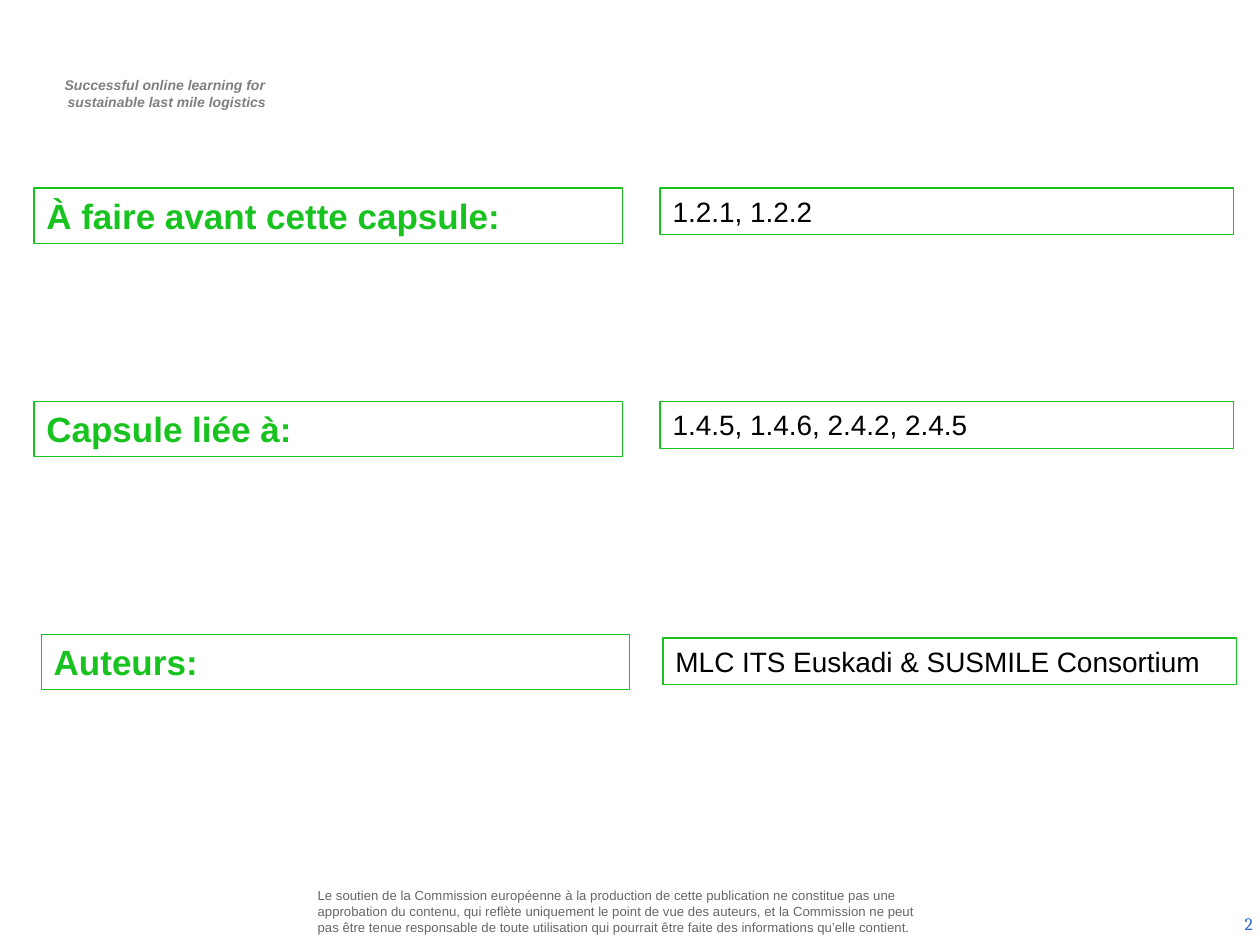
import pptx
import pptx.dml.color
import pptx.enum.shapes
import pptx.enum.text
import pptx.util

Pt = pptx.util.Pt
ALIGN = pptx.enum.text.PP_ALIGN
ANCHOR = pptx.enum.text.MSO_ANCHOR
GREEN = "18C320"


def colour(value):
    """Turn a hex string into a colour."""
    return pptx.dml.color.RGBColor.from_string(value)


def write(shape, lines, size, ink, font="Arial", bold=False, italic=False,
          align=ALIGN.LEFT, anchor=ANCHOR.TOP, inset=(7.2, 3.6), indent=0):
    """Fill a shape with evenly formatted paragraphs."""
    frame = shape.text_frame
    frame.word_wrap = True
    frame.vertical_anchor = anchor
    frame.margin_left = frame.margin_right = Pt(inset[0])
    frame.margin_top = frame.margin_bottom = Pt(inset[1])
    frame.text = "\n".join(lines)
    for paragraph in frame.paragraphs:
        paragraph.alignment = align
        if indent:
            paragraph._p.get_or_add_pPr().set("marL", str(Pt(indent)))
        paragraph.font.name = font
        paragraph.font.size = Pt(size)
        paragraph.font.bold = bold
        paragraph.font.italic = italic
        paragraph.font.color.rgb = colour(ink)


def add_text(page, box, lines, size, ink, **style):
    """Place a plain text box."""
    shape = page.shapes.add_textbox(*map(Pt, box))
    write(shape, lines, size, ink, **style)


def add_frame(page, box, text, size, ink, bold=False):
    """Place a white rectangle with a green outline and its text."""
    shape = page.shapes.add_shape(
        pptx.enum.shapes.MSO_SHAPE.RECTANGLE, *map(Pt, box))
    shape.shadow.inherit = False
    shape.fill.solid()
    shape.fill.fore_color.rgb = colour("FFFFFF")
    shape.line.color.rgb = colour(GREEN)
    shape.line.width = Pt(0.75)
    write(shape, [text], size, ink, bold=bold)


def add_entry(page, box, label, value, value_left=357.8, value_drop=0):
    """Place a label and its value side by side within a row."""
    left, top, width, height = box
    add_frame(page, (left, top, 336.2, height), label, 20, GREEN, bold=True)
    value_box = (left + value_left, top + value_drop, width - value_left, 26.7)
    add_frame(page, value_box, value, 16, "000000")


def add_header(page, box):
    """Place the course motto."""
    lines = ["Successful online learning for ", "sustainable last mile logistics"]
    add_text(page, box, lines, 8, "7F7F7F", bold=True, italic=True,
             align=ALIGN.CENTER, indent=2.88)


def add_footer(page, box):
    """Place the disclaimer and the page number."""
    left, top, width, height = box
    disclaimer = (
        "Le soutien de la Commission européenne à la production de cette "
        "publication ne constitue pas une approbation du contenu, qui reflète "
        "uniquement le point de vue des auteurs, et la Commission ne peut pas "
        "être tenue responsable de toute utilisation qui pourrait être faite "
        "des informations qu’elle contient.")
    add_text(page, (left, top, 355, height), [disclaimer], 7.5, "666666",
             anchor=ANCHOR.MIDDLE, inset=(2.88, 2.88))
    add_text(page, (left + width - 168, top + 7.2, 168, height), ["2"], 10,
             "3366CC", font="Cambria", align=ALIGN.RIGHT, anchor=ANCHOR.MIDDLE)


def main():
    """Build and save the deck."""
    deck = pptx.Presentation()
    deck.slide_width, deck.slide_height = Pt(720), Pt(540)
    page = deck.slides.add_slide(deck.slide_layouts[6])
    add_header(page, (20.9, 40.3, 146.2, 26.6))
    add_footer(page, (178.6, 506.2, 544.3, 28.8))
    add_entry(page, (19.4, 107.5, 685.4, 31.5),
              "À faire avant cette capsule:", "1.2.1, 1.2.2")
    add_entry(page, (19.4, 229.5, 685.4, 31.5),
              "Capsule liée à:", "1.4.5, 1.4.6, 2.4.2, 2.4.5")
    add_entry(page, (23.6, 362.6, 682.9, 31.5),
              "Auteurs:", "MLC ITS Euskadi & SUSMILE Consortium",
              value_left=355.3, value_drop=2)
    deck.save("out.pptx")


if __name__ == "__main__":
    main()
